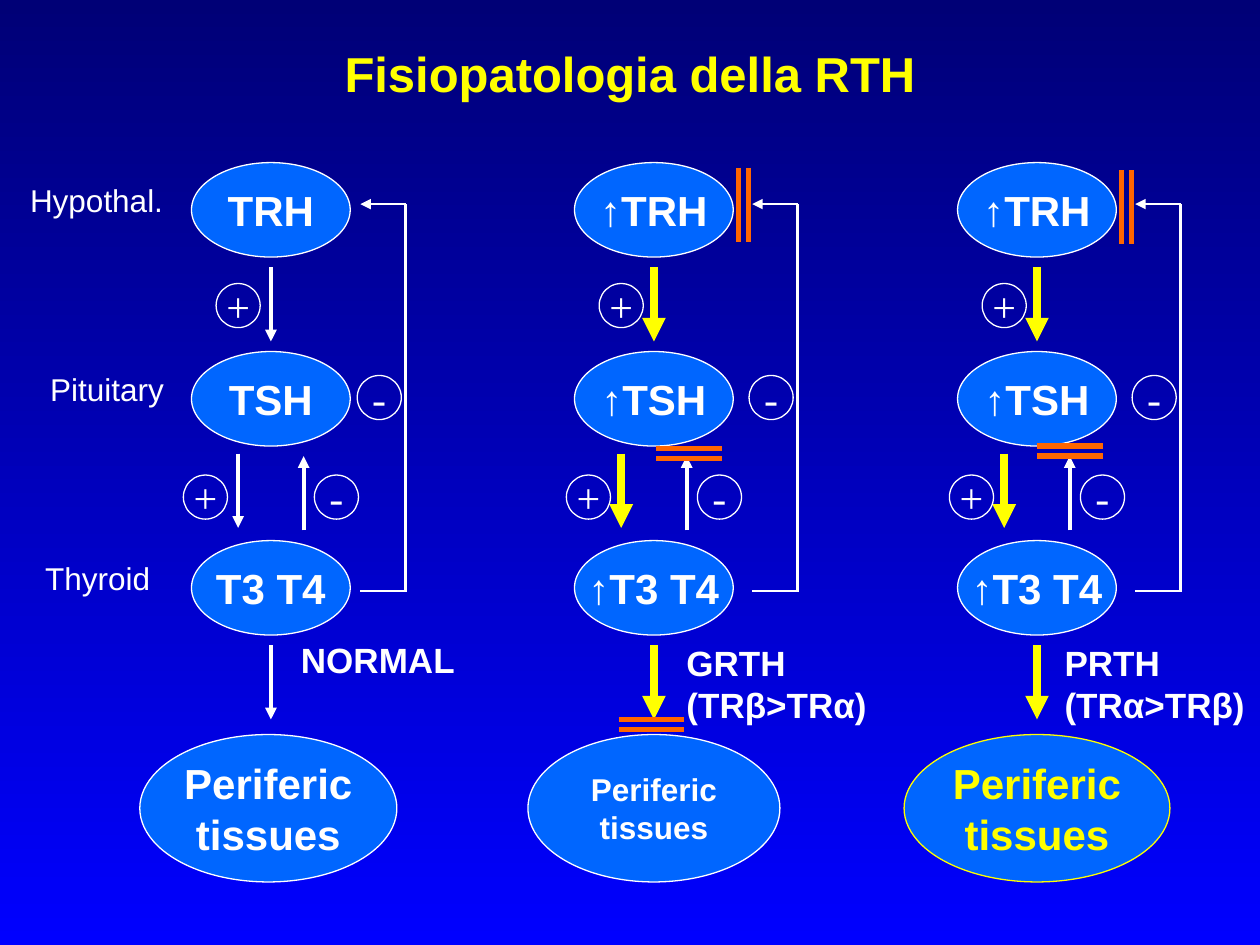
import pptx
import pptx.util
from pptx.dml.color import RGBColor
from pptx.enum.shapes import MSO_CONNECTOR, MSO_SHAPE
from pptx.enum.text import MSO_ANCHOR, MSO_AUTO_SIZE, PP_ALIGN
from pptx.oxml.ns import qn
from lxml import etree

NAVY = RGBColor(0x00, 0x00, 0x76)
BLUE = RGBColor(0x00, 0x00, 0xFF)
AZURE = RGBColor(0x00, 0x66, 0xFF)
WHITE = RGBColor(0xFF, 0xFF, 0xFF)
YELLOW = RGBColor(0xFF, 0xFF, 0x00)
ORANGE = RGBColor(0xFF, 0x66, 0x00)

TITLE = "Fisiopatologia della RTH"
HORMONES = ["TRH", "TSH", "T3 T4"]
GLANDS = [("Hypothal.", 0.14, 1.3), ("Pituitary", 0.3, 1.14), ("Thyroid", 0.26, 1.08)]

# loop: distance of the feedback line from the column centre
# bars: left, top and direction of each pair of blocking bars
CASES = [
    dict(name="NORMAL", label=(2.29, 5.02, 1.46, 0.43), rise="", drive=(WHITE, 2.25),
         loop=1.07, tissue=(2.13, 2.04, 24, WHITE), bars=[]),
    dict(name="GRTH\n(TRβ>TRα)", label=(5.35, 5.04, 1.67, 0.77), rise="↑",
         drive=(YELLOW, 4.5), loop=1.14, tissue=(5.19, 2.0, 18, WHITE),
         bars=[(4.91, 5.71, "across"), (5.86, 1.33, "down"), (5.21, 3.56, "across")]),
    dict(name="PRTH\n(TRα>TRβ)", label=(8.35, 5.04, 1.65, 0.77), rise="↑",
         drive=(YELLOW, 4.5), loop=1.14, tissue=(8.23, 2.11, 24, YELLOW),
         bars=[(8.9, 1.35, "down"), (8.23, 3.54, "across")]),
]

FIRST, PITCH = 2.15, 3.04     # column centres
TOP, STEP = 1.29, 1.5         # hormone rows
OVAL_W, OVAL_H = 1.26, 0.75
SIGN = 0.35
SIDE = 0.26                   # paired arrows, off the column centre
ARROW = 0.59

inch = pptx.util.Inches


def write(shape, text, size, color, bold=True, font="Arial", align=PP_ALIGN.CENTER):
    frame = shape.text_frame
    frame.text = text
    frame.word_wrap = False
    for par in frame.paragraphs:
        par.alignment = align
        par.font.name = font
        par.font.size = pptx.util.Pt(size)
        par.font.bold = bold
        par.font.color.rgb = color
    return frame


def oval(x, y, w, h, text, size=24, color=WHITE, fill=AZURE, **style):
    """Draw an ellipse centred on x with its top at y."""
    shape = slide.shapes.add_shape(MSO_SHAPE.OVAL, inch(x - w / 2), inch(y), inch(w), inch(h))
    shape.shadow.inherit = False
    if fill is None:
        shape.fill.background()
    else:
        shape.fill.solid()
        shape.fill.fore_color.rgb = fill
    shape.line.color.rgb = color
    shape.line.width = pptx.util.Pt(0.75)
    write(shape, text, size, color, **style).vertical_anchor = MSO_ANCHOR.MIDDLE


def sign(x, y, text):
    oval(x, y, SIGN, SIGN, text, fill=None, bold=False, font="Times New Roman")


def line(x1, y1, x2, y2, color=WHITE, width=1.5, arrow=False):
    rule = slide.shapes.add_connector(
        MSO_CONNECTOR.STRAIGHT, inch(x1), inch(y1), inch(x2), inch(y2))
    rule.line.color.rgb = color
    rule.line.width = pptx.util.Pt(width)
    if arrow:
        etree.SubElement(rule.line._get_or_add_ln(), qn("a:tailEnd"), type="triangle")
    etree.SubElement(rule._element.spPr, qn("a:effectLst"))


def label(box, text, size, bold):
    shape = slide.shapes.add_textbox(*map(inch, box))
    write(shape, text, size, WHITE, bold, align=PP_ALIGN.LEFT)
    # a fixed box keeps each name on one line
    shape.text_frame.auto_size = MSO_AUTO_SIZE.NONE


def bars(x, y, way):
    for gap in (0, 0.08):
        if way == "across":
            line(x, y + gap, x + 0.52, y + gap, ORANGE, 3)
        else:
            line(x + gap, y, x + gap, y + ARROW, ORANGE, 3)


def column(mid, case):
    for row, name in enumerate(HORMONES):
        oval(mid, TOP + row * STEP, OVAL_W, OVAL_H, case["rise"] + name)
    x, width, size, color = case["tissue"]
    oval(x, 5.83, width, 1.17, "Periferic\ntissues", size, color)

    for x, y in ((mid, 2.12), (mid - SIDE, 3.6), (mid, 5.12)):
        line(x, y, x, y + ARROW, *case["drive"], arrow=True)
    line(mid + SIDE, 4.21, mid + SIDE, 4.21 - ARROW, WHITE, 2.25, arrow=True)

    loop = mid + case["loop"]
    near = loop - 0.36
    line(loop, 1.62, loop, 4.7)
    line(loop, 1.62, near, 1.62, arrow=True)
    line(near, 4.69, loop, 4.69)

    sign(loop - 0.21, 2.98, "-")
    sign(mid + 2 * SIDE, 3.77, "-")
    sign(mid - 2 * SIDE, 3.77, "+")
    sign(mid - SIDE, 2.25, "+")
    for pair in case["bars"]:
        bars(*pair)
    label(case["label"], case["name"], 20, True)


deck = pptx.Presentation()
deck.slide_width, deck.slide_height = inch(10), inch(7.5)
slide = deck.slides.add_slide(deck.slide_layouts[5])

back = slide.background.fill
back.gradient()
back.gradient_angle = 270
for stop, color, place in zip(back.gradient_stops, (NAVY, BLUE), (0, 1)):
    stop.color.rgb = color
    stop.position = place

title = slide.shapes.title
title.left, title.top, title.width, title.height = map(inch, (0, 0.2, 10, 0.75))
frame = write(title, TITLE, 28, YELLOW)
frame.word_wrap = True
frame.auto_size = MSO_AUTO_SIZE.NONE
frame.vertical_anchor = MSO_ANCHOR.MIDDLE

for col, case in enumerate(CASES):
    column(FIRST + col * PITCH, case)
for row, (name, left, width) in enumerate(GLANDS):
    label((left, TOP + 0.1 + row * STEP, width, 0.4), name, 18, False)

deck.save("out.pptx")
